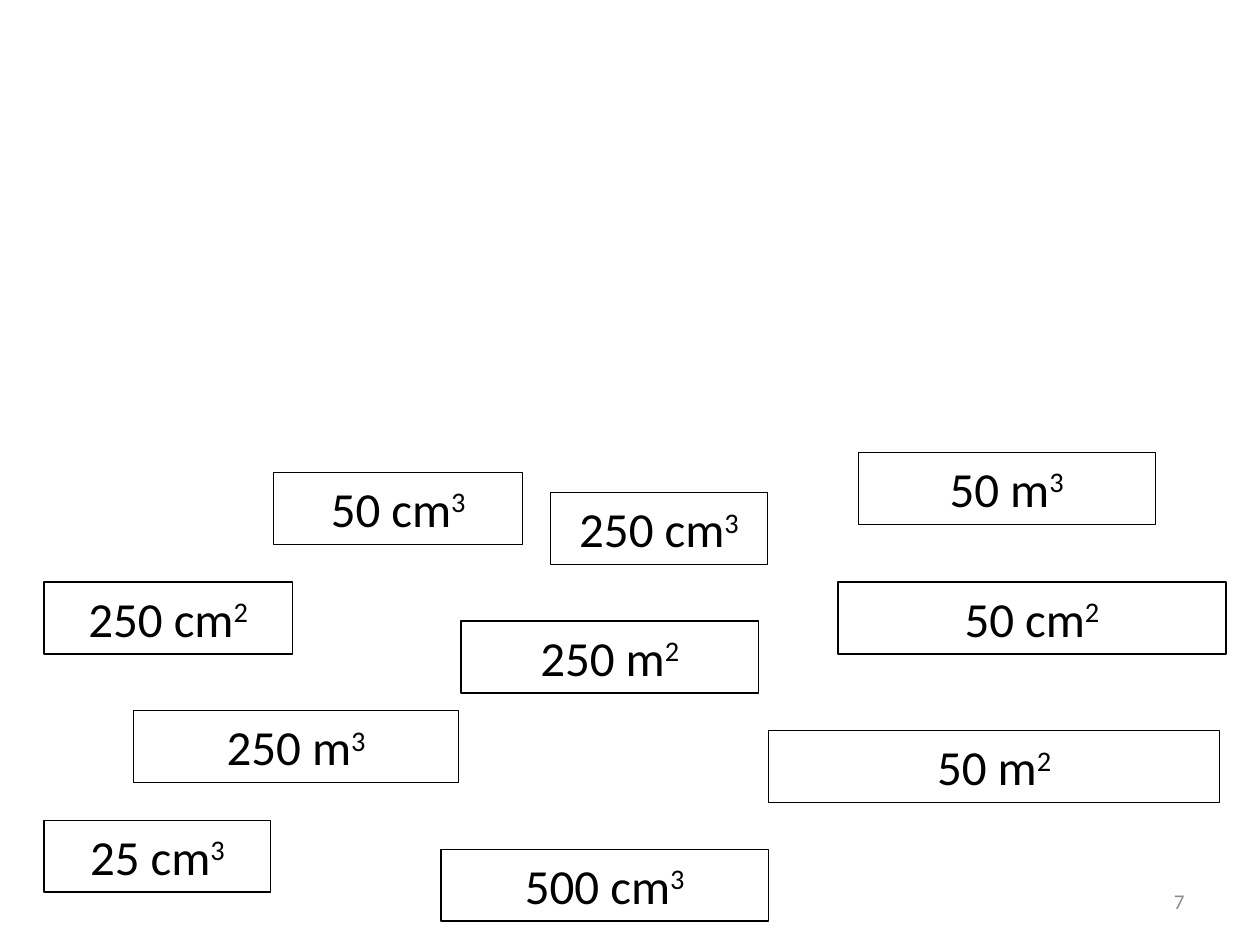
from dataclasses import dataclass

from pptx import Presentation
from pptx.dml.color import RGBColor
from pptx.enum.shapes import MSO_SHAPE
from pptx.enum.text import MSO_ANCHOR, MSO_AUTO_SIZE, PP_ALIGN
from pptx.util import Inches, Pt

RECTANGLE = MSO_SHAPE.RECTANGLE
CENTER, RIGHT = PP_ALIGN.CENTER, PP_ALIGN.RIGHT
TOP, MIDDLE = MSO_ANCHOR.TOP, MSO_ANCHOR.MIDDLE
FIT_SHAPE = MSO_AUTO_SIZE.SHAPE_TO_FIT_TEXT
BLANK_LAYOUT = 6


@dataclass(frozen=True)
class Theme:
    font: str = "Calibri"
    ink: RGBColor = RGBColor(0, 0, 0)
    paper: RGBColor = RGBColor(255, 255, 255)
    muted: RGBColor = RGBColor(0x8C, 0x8C, 0x8C)
    card_size: int = 28
    number_size: int = 12
    outline: float = 0.75
    thin_outline: float = 0.5
    raised: str = "30000"


THEME = Theme()
CARD_HEIGHT = 0.57

# value, unit, power, left, top, width
CARDS = [
    (25, "cm", 3, 0.35, 6.51, 1.80),
    (50, "cm", 3, 2.17, 3.75, 1.98),
    (50, "cm", 2, 6.65, 4.62, 3.08),
    (250, "cm", 2, 0.35, 4.62, 1.97),
    (500, "cm", 3, 3.50, 6.74, 2.60),
    (50, "m", 3, 6.81, 3.59, 2.36),
    (250, "m", 2, 3.66, 4.93, 2.36),
    (50, "m", 2, 6.10, 5.80, 3.58),
    (250, "cm", 3, 4.37, 3.91, 1.72),
    (250, "m", 3, 1.06, 5.64, 2.58),
]
FILLED_CARD = (50, "m", 3)


def write_text(frame, text, *, size, color, align, anchor=TOP, power=None):
    """Write one paragraph, with an optional raised power after the text."""
    frame.word_wrap = True
    frame.vertical_anchor = anchor
    para = frame.paragraphs[0]
    para.alignment = align
    for part in (text, power):
        if part is None:
            continue
        span = para.add_run()
        span.text = str(part)
        span.font.name = THEME.font
        span.font.size = Pt(size)
        span.font.color.rgb = color
    if power is not None:
        span.font._element.set("baseline", THEME.raised)


def add_card(page, box, text, power, filled):
    card = page.shapes.add_shape(RECTANGLE, *map(Inches, box))
    card.shadow.inherit = False
    if filled:
        card.fill.solid()
        card.fill.fore_color.rgb = THEME.paper
    else:
        card.fill.background()
    card.line.color.rgb = THEME.ink
    card.line.width = Pt(THEME.thin_outline if filled else THEME.outline)
    write_text(card.text_frame, text, size=THEME.card_size, color=THEME.ink,
               align=CENTER, power=power)
    card.text_frame.auto_size = FIT_SHAPE


def add_page_number(page, box, number):
    label = page.shapes.add_textbox(*map(Inches, box))
    write_text(label.text_frame, number, size=THEME.number_size,
               color=THEME.muted, align=RIGHT, anchor=MIDDLE)


def main():
    deck = Presentation()
    deck.slide_width, deck.slide_height = Inches(10), Inches(7.5)
    page = deck.slides.add_slide(deck.slide_layouts[BLANK_LAYOUT])
    for value, unit, power, left, top, width in CARDS:
        add_card(page, (left, top, width, CARD_HEIGHT), f"{value} {unit}",
                 power, filled=(value, unit, power) == FILLED_CARD)
    add_page_number(page, (7.17, 6.95, 2.33, 0.4), "7")
    deck.save("out.pptx")


if __name__ == "__main__":
    main()
